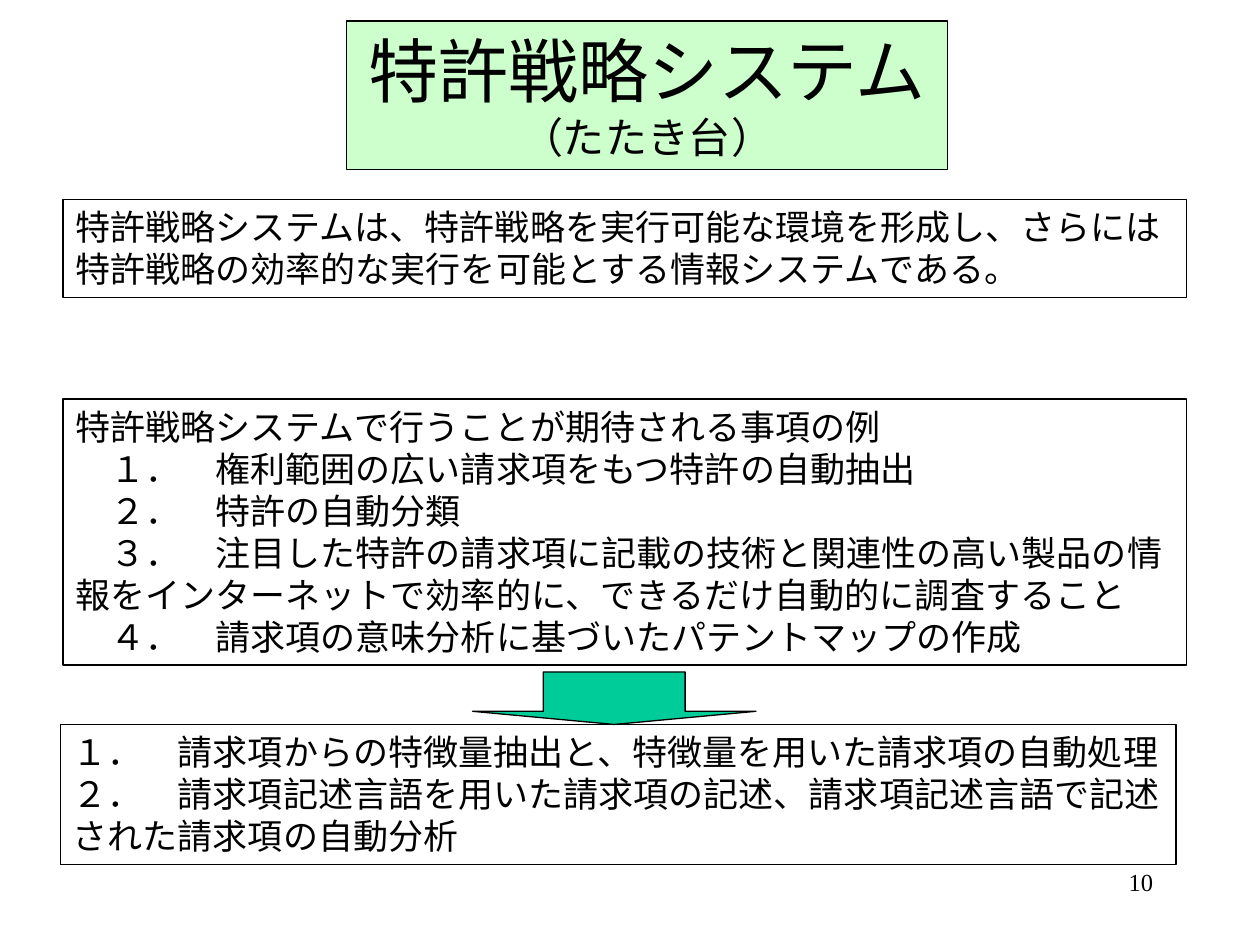
from dataclasses import dataclass

from pptx import Presentation
from pptx.dml.color import RGBColor
from pptx.enum.shapes import MSO_SHAPE
from pptx.enum.text import MSO_ANCHOR, MSO_AUTO_SIZE, PP_ALIGN
from pptx.util import Pt

RECT, ARROW = MSO_SHAPE.RECTANGLE, MSO_SHAPE.DOWN_ARROW
LEFT, MID, RIGHT = PP_ALIGN.LEFT, PP_ALIGN.CENTER, PP_ALIGN.RIGHT
TOP, GROW = MSO_ANCHOR.TOP, MSO_AUTO_SIZE.SHAPE_TO_FIT_TEXT


@dataclass(frozen=True)
class Theme:
    """Colours, font and sizes in points."""
    ink: RGBColor = RGBColor(0, 0, 0)
    mint: RGBColor = RGBColor(0xCC, 0xFF, 0xCC)
    teal: RGBColor = RGBColor(0, 0xCC, 0x99)
    font: str = "Times New Roman"
    title: float = 40
    sub: float = 24
    body: float = 20
    page: float = 14
    line: float = 0.75


THEME = Theme()

GOAL = ["特許戦略システムは、特許戦略を実行可能な環境を形成し、さらには特許戦略の効率的な実行を可能とする情報システムである。"]
TASKS = [
    "特許戦略システムで行うことが期待される事項の例",
    "　１．　権利範囲の広い請求項をもつ特許の自動抽出",
    "　２．　特許の自動分類",
    "　３．　注目した特許の請求項に記載の技術と関連性の高い製品の情報をインターネットで効率的に、できるだけ自動的に調査すること",
    "　４．　請求項の意味分析に基づいたパテントマップの作成",
]
MEANS = [
    "１．　請求項からの特徴量抽出と、特徴量を用いた請求項の自動処理",
    "２．　請求項記述言語を用いた請求項の記述、請求項記述言語で記述された請求項の自動分析",
]


def put(item, values):
    """Set each attribute named in a dict of format values."""
    for name, value in values.items():
        setattr(item, name, value)


def write(shape, rows, align):
    """Fill a shape with one paragraph for each (text, size) row."""
    frame = shape.text_frame
    put(frame, {"word_wrap": True, "vertical_anchor": TOP})
    for i, (text, size) in enumerate(rows):
        para = frame.add_paragraph() if i else frame.paragraphs[0]
        para.alignment = align
        run = para.add_run()
        run.text = text
        put(run.font, {"name": THEME.font, "size": Pt(size)})
        run.font.color.rgb = THEME.ink


def draw(slide, kind, box, fill=None):
    """Add an outlined preset shape, filled when a colour is given."""
    shape = slide.shapes.add_shape(kind, *map(Pt, box))
    shape.shadow.inherit = False
    if fill is None:
        shape.fill.background()
    else:
        shape.fill.solid()
        shape.fill.fore_color.rgb = fill
    shape.line.width = Pt(THEME.line)
    shape.line.color.rgb = THEME.ink
    return shape


def add_title(slide, box):
    """Place the title panel with its subtitle."""
    shape = draw(slide, RECT, box, THEME.mint)
    rows = [("特許戦略システム", THEME.title), ("（たたき台）", THEME.sub)]
    write(shape, rows, MID)
    shape.text_frame.auto_size = GROW


def add_panel(slide, box, lines):
    """Place a framed panel of body lines."""
    shape = draw(slide, RECT, box)
    write(shape, [(line, THEME.body) for line in lines], LEFT)
    shape.text_frame.auto_size = GROW


def add_arrow(slide, box):
    """Place the flat down arrow between two panels."""
    shape = draw(slide, ARROW, box, THEME.teal)
    shape.adjustments[0], shape.adjustments[1] = 0.5, 0.25


def add_page(slide, box):
    """Place the page number."""
    write(slide.shapes.add_textbox(*map(Pt, box)), [("10", THEME.page)], RIGHT)


def main():
    """Build the slide and save it."""
    deck = Presentation()
    put(deck, {"slide_width": Pt(720), "slide_height": Pt(540)})
    slide = deck.slides.add_slide(deck.slide_layouts[6])
    add_page(slide, (516, 492, 150, 36))
    add_title(slide, (198, 12, 343.5, 85))
    add_panel(slide, (36, 114, 642, 56), GOAL)
    add_panel(slide, (36, 228, 642, 152), TASKS)
    add_arrow(slide, (270, 384, 162, 30))
    add_panel(slide, (34.5, 414, 637.5, 80), MEANS)
    deck.save("out.pptx")


if __name__ == "__main__":
    main()
